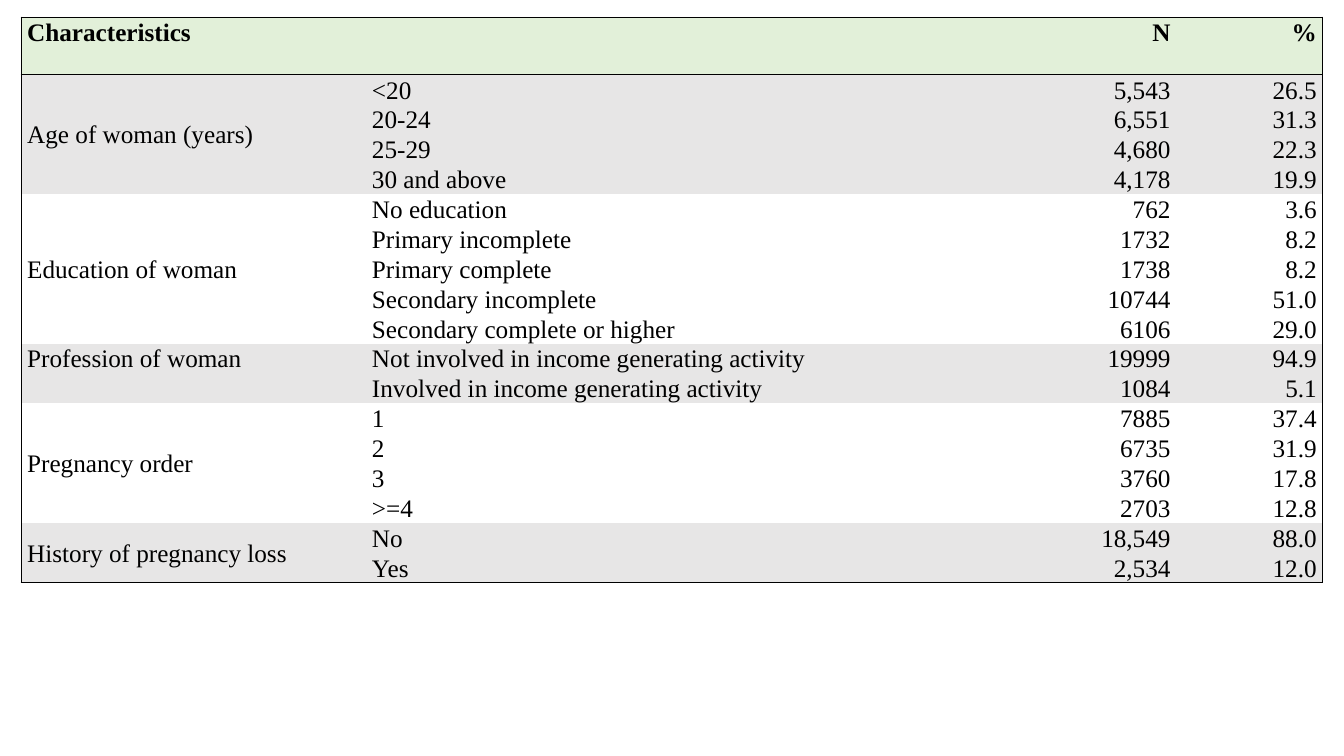
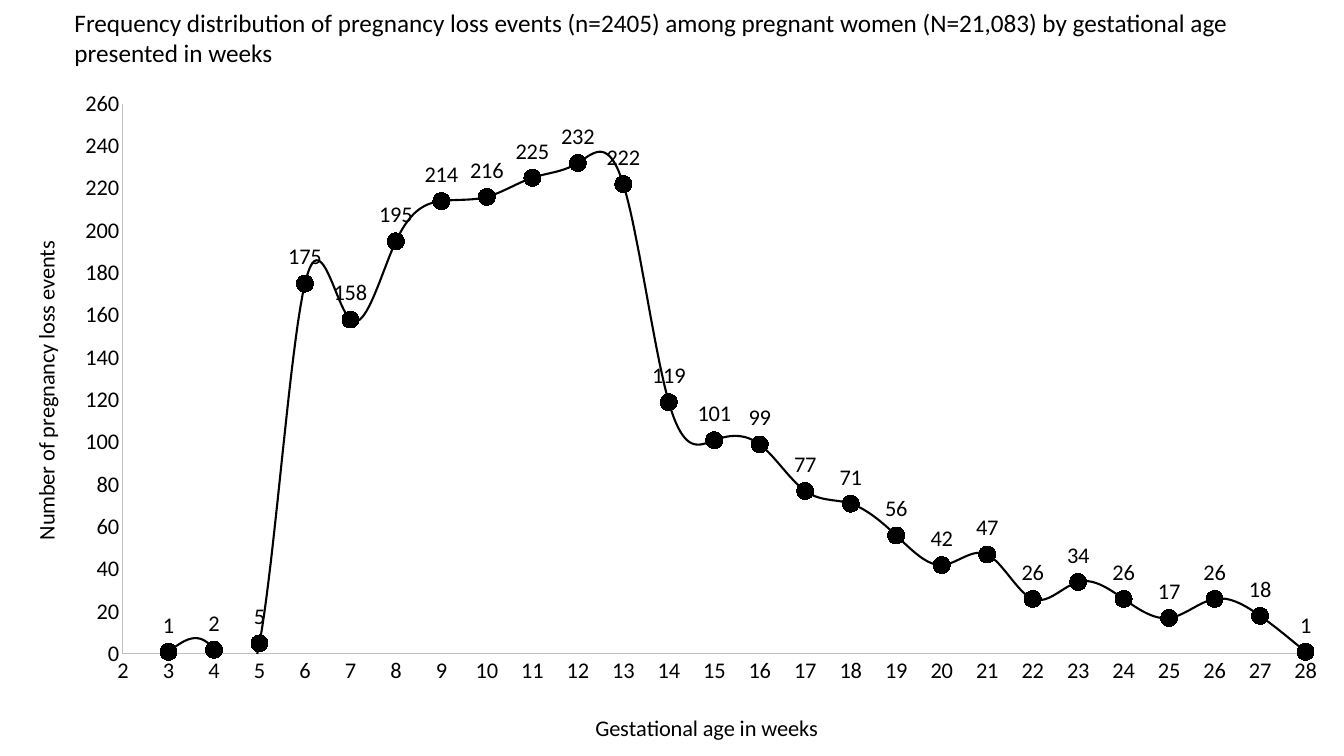
from lxml.etree import SubElement
from pptx import Presentation
from pptx.chart.data import XyChartData
from pptx.chart.datalabel import DataLabels
from pptx.dml.color import RGBColor
from pptx.enum.chart import (XL_AXIS_CROSSES, XL_CHART_TYPE, XL_LABEL_POSITION,
                             XL_MARKER_STYLE, XL_TICK_MARK)
from pptx.enum.text import MSO_ANCHOR, MSO_AUTO_SIZE, PP_ALIGN
from pptx.oxml import parse_xml
from pptx.oxml.ns import nsdecls, qn
from pptx.util import Inches, Pt

BLACK, WHITE, GREEN, GRAY, AXIS_GRAY = "000000", "FFFFFF", "E2F0D9", "E7E6E6", "BFBFBF"

HEADINGS = ("Characteristics", "", "N", "%")
COLUMN_WIDTHS = (3.42, 6.34, 1.7, 1.45)
GROUPS = [
    ("Age of woman (years)", MSO_ANCHOR.MIDDLE, [
        ("<20", "5,543", "26.5"),
        ("20-24", "6,551", "31.3"),
        ("25-29", "4,680", "22.3"),
        ("30 and above", "4,178", "19.9")]),
    ("Education of woman", MSO_ANCHOR.MIDDLE, [
        ("No education", "762", "3.6"),
        ("Primary incomplete", "1732", "8.2"),
        ("Primary complete", "1738", "8.2"),
        ("Secondary incomplete", "10744", "51.0"),
        ("Secondary complete or higher", "6106", "29.0")]),
    ("Profession of woman", MSO_ANCHOR.TOP, [
        ("Not involved in income generating activity", "19999", "94.9"),
        ("Involved in income generating activity", "1084", "5.1")]),
    ("Pregnancy order", MSO_ANCHOR.MIDDLE, [
        ("1", "7885", "37.4"),
        ("2", "6735", "31.9"),
        ("3", "3760", "17.8"),
        (">=4", "2703", "12.8")]),
    ("History of pregnancy loss", MSO_ANCHOR.MIDDLE, [
        ("No", "18,549", "88.0"),
        ("Yes", "2,534", "12.0")]),
]

FIRST_WEEK = 3
LOSSES = [1, 2, 5, 175, 158, 195, 214, 216, 225, 232, 222, 119, 101,
          99, 77, 71, 56, 42, 47, 26, 34, 26, 17, 26, 18, 1]


def color(hex_string):
    return RGBColor.from_string(hex_string)


def style_font(font, name="Calibri", size=16, bold=False):
    font.name, font.size, font.bold = name, Pt(size), bold
    font.color.rgb = color(BLACK)


def write(frame, text, align=None, spacing=None, before=None, **font_format):
    paragraph = frame.paragraphs[0]
    paragraph.alignment = align
    paragraph.line_spacing = spacing
    if before is not None:
        paragraph.space_before = Pt(before)
    run = paragraph.add_run()
    run.text = text
    style_font(run.font, **font_format)


def place(element, **fractions):
    """Give a chart part a fixed place, in fractions of the chart."""
    layout = element.find(qn("c:layout"))
    if layout is None:
        layout = parse_xml(f"<c:layout {nsdecls('c')}/>")
        element.insert(0 if element.find(qn("c:tx")) is None else 1, layout)
    manual = SubElement(layout, qn("c:manualLayout"))
    if "w" in fractions:
        SubElement(manual, qn("c:layoutTarget")).set("val", "inner")
    for key in ("x", "y"):
        SubElement(manual, qn(f"c:{key}Mode")).set("val", "edge")
    for key, value in fractions.items():
        SubElement(manual, qn(f"c:{key}")).set("val", str(value))


def set_borders(cell, edges):
    """Draw the named edges (L, R, T, B) in black and clear the others."""
    properties = cell._tc.get_or_add_tcPr()
    for edge in "LRTB":
        line = SubElement(properties, qn(f"a:ln{edge}"))
        if edge in edges:
            line.set("w", str(Pt(1)))
            fill = SubElement(line, qn("a:solidFill"))
            SubElement(fill, qn("a:srgbClr")).set("val", BLACK)
        else:
            SubElement(line, qn("a:noFill"))


class Deck:
    def __init__(self):
        self.presentation = Presentation()
        self.presentation.slide_width = Inches(13.33)
        self.presentation.slide_height = Inches(7.5)
        self.slide = None

    def add_slide(self):
        self.slide = self.presentation.slides.add_slide(self.presentation.slide_layouts[6])

    def add_title(self, text, left, top, width, height):
        box = self.slide.shapes.add_textbox(*map(Inches, (left, top, width, height)))
        box.text_frame.word_wrap = True
        box.text_frame.auto_size = MSO_AUTO_SIZE.SHAPE_TO_FIT_TEXT
        write(box.text_frame, text, size=18)

    def add_cell(self, table, row, column, text, fill, edges, **text_format):
        cell = table.cell(row, column)
        cell.margin_left = cell.margin_right = Inches(0.06)
        cell.margin_top = cell.margin_bottom = 0
        set_borders(cell, edges)
        cell.fill.solid()
        cell.fill.fore_color.rgb = color(fill)
        if text:
            write(cell.text_frame, text, spacing=1.07, name="Times New Roman", size=18,
                  align=PP_ALIGN.RIGHT if column > 1 else None, **text_format)
        return cell

    def add_group_table(self, left, top, header_height, row_height):
        last_row = sum(len(rows) for _, _, rows in GROUPS)
        table = self.slide.shapes.add_table(
            last_row + 1, len(HEADINGS), Inches(left), Inches(top),
            Inches(sum(COLUMN_WIDTHS)), Inches(header_height + last_row * row_height)).table
        table.first_row = table.horz_banding = False
        for column, width in zip(table.columns, COLUMN_WIDTHS):
            column.width = Inches(width)
        for index, table_row in enumerate(table.rows):
            table_row.height = Inches(row_height if index else header_height)
        sides = ("L", "", "", "R")

        # Heading row
        for column, heading in enumerate(HEADINGS):
            self.add_cell(table, 0, column, heading, GREEN, sides[column] + "TB",
                          bold=True, before=6)

        # Groups, shaded in turn
        row = 1
        for number, (name, anchor, rows) in enumerate(GROUPS):
            first, end = row, row + len(rows) - 1
            for values in rows:
                label = name if row == first else ""
                for column, text in enumerate((label, *values)):
                    edges = sides[column] + ("T" if row == 1 else "")
                    if row == last_row or (column == 0 and end == last_row and row == first):
                        edges += "B"
                    self.add_cell(table, row, column, text, WHITE if number % 2 else GRAY, edges)
                row += 1
            name_cell = table.cell(first, 0)
            name_cell.vertical_anchor = anchor
            name_cell.merge(table.cell(end, 0))

    def style_axis(self, axis, title, low, high, step, x, y, rotation=0):
        axis.minimum_scale, axis.maximum_scale, axis.major_unit = low, high, step
        axis.has_major_gridlines = False
        axis.major_tick_mark = axis.minor_tick_mark = XL_TICK_MARK.NONE
        axis.crosses = XL_AXIS_CROSSES.MINIMUM
        axis.format.line.color.rgb = color(AXIS_GRAY)
        axis.format.line.width = Pt(0.75)
        style_font(axis.tick_labels.font)
        frame = axis.axis_title.text_frame
        write(frame, title)
        frame._txBody.bodyPr.set("rot", str(rotation * 60000))
        frame._txBody.bodyPr.set("vert", "horz")
        place(axis.axis_title._element, x=x, y=y)

    def add_curve(self, left, top, width, height):
        data = XyChartData()
        points = data.add_series("Series 1")
        for week, losses in enumerate(LOSSES, FIRST_WEEK):
            points.add_data_point(week, losses)
        chart = self.slide.shapes.add_chart(
            XL_CHART_TYPE.XY_SCATTER_SMOOTH,
            *map(Inches, (left, top, width, height)), data).chart
        chart.has_legend = chart.has_title = False
        style_font(chart.font)
        plot = chart.plots[0]
        plot.vary_by_categories = False
        place(chart._chartSpace.chart.plotArea, x=0.0915, y=0.04, w=0.88, h=0.81)

        # Axes
        self.style_axis(chart.category_axis, "Gestational age in weeks",
                        2, 28, 1, x=0.44, y=0.93)
        self.style_axis(chart.value_axis, "Number of pregnancy loss events",
                        0, 260, 20, x=0.02, y=0.236, rotation=-90)

        # Curve, markers and labels
        series = plot.series[0]
        series._element.get_or_add_smooth().val = True
        series.format.line.color.rgb = color(BLACK)
        series.format.line.width = Pt(1.5)
        marker = series.marker
        marker.style, marker.size = XL_MARKER_STYLE.CIRCLE, 12
        marker.format.fill.solid()
        marker.format.fill.fore_color.rgb = color(BLACK)
        marker.format.line.color.rgb = color(BLACK)
        labels = DataLabels(series._element.get_or_add_dLbls())
        labels.show_value = True
        labels.position = XL_LABEL_POSITION.ABOVE
        style_font(labels.font)


def main():
    deck = Deck()

    # Characteristics of the women
    deck.add_slide()
    deck.add_group_table(0.21, 0.17, header_height=0.57, row_height=0.29)

    # Losses by gestational age
    deck.add_slide()
    deck.add_curve(0, 0.76, 13.33, 6.74)
    deck.add_title("Frequency distribution of pregnancy loss events (n=2405) among pregnant "
                   "women (N=21,083) by gestational age presented in weeks",
                   0.64, 0.02, 12.05, 0.71)

    deck.presentation.save("out.pptx")


if __name__ == "__main__":
    main()
